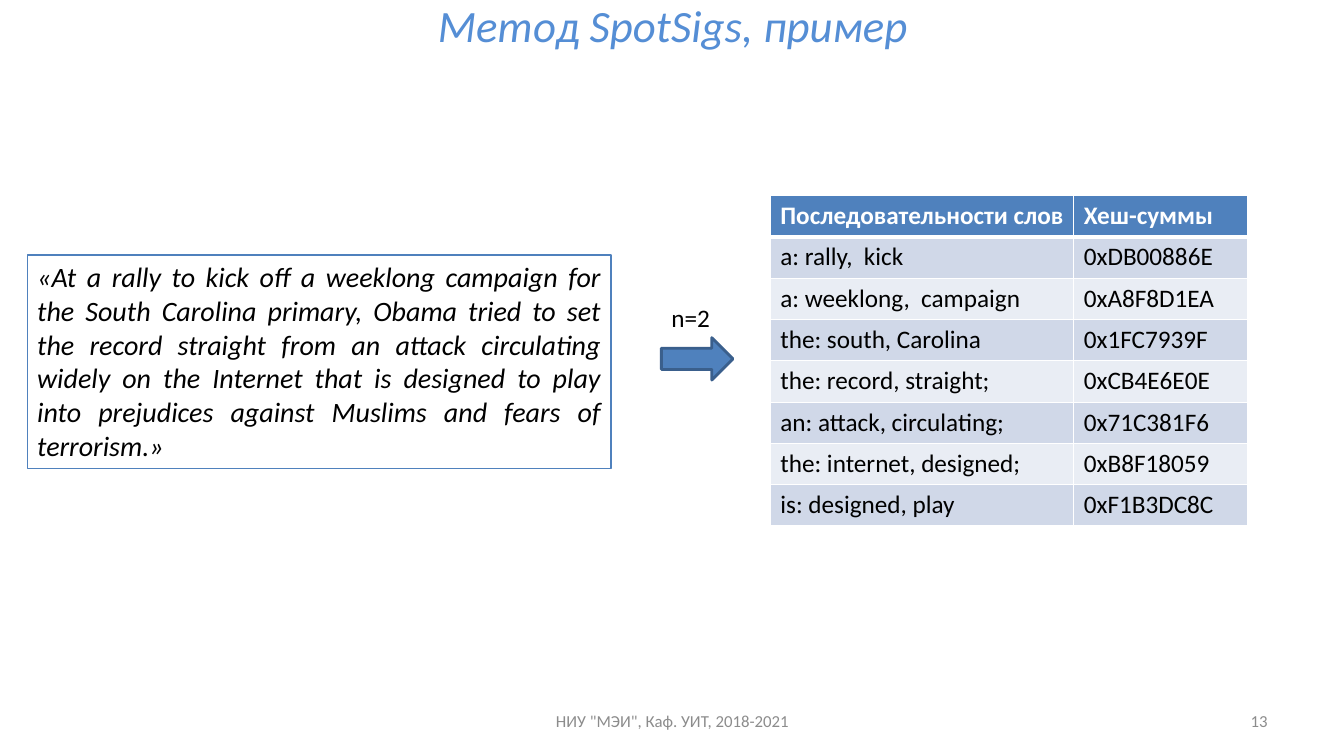
"""Builds the SpotSigs example slide: a quotation, an arrow and a table of hashes."""
from dataclasses import dataclass

from lxml import etree
from pptx import Presentation
from pptx import util as u
from pptx.dml.color import RGBColor
from pptx.enum import shapes, text
from pptx.oxml.ns import qn

TITLE = "Метод SpotSigs, пример"
QUOTE = (
    "«At a rally to kick off a weeklong campaign for the South Carolina primary, "
    "Obama tried to set the record straight from an attack circulating widely on "
    "the Internet that is designed to play into prejudices against Muslims and "
    "fears of terrorism.»"
)
STEP = "n=2"
FOOTER = 'НИУ "МЭИ", Каф. УИТ, 2018-2021'
PAGE = "13"
HASHES = [
    ("Последовательности слов", "Хеш-суммы"),
    ("a: rally,  kick", "0xDB00886E"),
    ("a: weeklong,  campaign", "0xA8F8D1EA"),
    ("the: south, Carolina", "0x1FC7939F"),
    ("the: record, straight;", "0xCB4E6E0E"),
    ("an: attack, circulating;", "0x71C381F6"),
    ("the: internet, designed;", "0xB8F18059"),
    ("is: designed, play", "0xF1B3DC8C"),
]
COL_WIDTHS = (3.01, 1.72)
ROW_HEIGHT = 0.41


@dataclass(frozen=True)
class Theme:
    font: str = "Calibri"
    title: str = "558ED5"
    accent: str = "4F81BD"
    edge: str = "3A5F8C"
    ink: str = "000000"
    paper: str = "FFFFFF"
    muted: str = "8C8C8C"
    bands: tuple = ("D0D8E8", "E9EDF4")
    title_size: int = 32
    quote_size: int = 20
    body_size: int = 18
    footer_size: int = 12


T = Theme()
ALIGN = text.PP_ALIGN
MIDDLE = text.MSO_ANCHOR.MIDDLE
TOP = text.MSO_ANCHOR.TOP


def rgb(value):
    return RGBColor.from_string(value)


def box(left, top, width, height):
    return [u.Inches(n) for n in (left, top, width, height)]


def write(tf, words, size, color, align=ALIGN.LEFT, bold=False, italic=False):
    p = tf.paragraphs[0]
    p.alignment = align
    r = p.add_run()
    r.text = words
    f = r.font
    f.name, f.size, f.bold, f.italic = T.font, u.Pt(size), bold, italic
    f.color.rgb = rgb(color)


def add_label(s, place, words, size, color, align=ALIGN.LEFT, anchor=MIDDLE,
              wrap=True, italic=False):
    tf = s.shapes.add_textbox(*box(*place)).text_frame
    tf.word_wrap = wrap
    tf.vertical_anchor = anchor
    write(tf, words, size, color, align, italic=italic)


def add_figure(s, kind, place, line, width, fill=None):
    sp = s.shapes.add_shape(kind, *box(*place))
    sp.shadow.inherit = False
    if fill:
        sp.fill.solid()
        sp.fill.fore_color.rgb = rgb(fill)
    else:
        sp.fill.background()
    sp.line.color.rgb = rgb(line)
    sp.line.width = u.Pt(width)
    return sp


def set_borders(cell, widths):
    tc_pr = cell._tc.get_or_add_tcPr()
    for i, (side, width) in enumerate(widths.items()):
        ln = etree.Element(qn(f"a:ln{side}"), w=str(u.Pt(width)))
        fill = etree.SubElement(ln, qn("a:solidFill"))
        etree.SubElement(fill, qn("a:srgbClr"), val=T.paper)
        tc_pr.insert(i, ln)


def add_hashes(s, left, top):
    place = box(left, top, sum(COL_WIDTHS), ROW_HEIGHT * len(HASHES))
    table = s.shapes.add_table(len(HASHES), len(COL_WIDTHS), *place).table
    for col, width in zip(table.columns, COL_WIDTHS):
        col.width = u.Inches(width)
    for i, row in enumerate(HASHES):
        head = i == 0
        table.rows[i].height = u.Inches(ROW_HEIGHT)
        for j, words in enumerate(row):
            cell = table.cell(i, j)
            cell.fill.solid()
            cell.fill.fore_color.rgb = rgb(T.accent if head else T.bands[(i - 1) % 2])
            set_borders(cell, {"L": 1, "R": 1, "T": 3 if i == 1 else 1, "B": 3 if head else 1})
            write(cell.text_frame, words, T.body_size, T.paper if head else T.ink, bold=head)


def main():
    prs = Presentation()
    prs.slide_width, prs.slide_height = u.Inches(13.33), u.Inches(7.5)
    s = prs.slides.add_slide(prs.slide_layouts[6])

    add_label(s, (0.27, 0.08, 12.81, 0.33), TITLE, T.title_size, T.title,
              ALIGN.CENTER, italic=True)
    add_label(s, (4.56, 6.95, 4.22, 0.4), FOOTER, T.footer_size, T.muted, ALIGN.CENTER)
    add_label(s, (9.56, 6.95, 3.11, 0.4), PAGE, T.footer_size, T.muted, ALIGN.RIGHT)
    add_hashes(s, 7.64, 1.94)

    kinds = shapes.MSO_SHAPE
    quote = add_figure(s, kinds.RECTANGLE, (0.27, 2.53, 5.79, 2.12), T.accent, 0.75)
    tf = quote.text_frame
    tf.word_wrap = True
    tf.vertical_anchor = TOP
    write(tf, QUOTE, T.quote_size, T.ink, ALIGN.JUSTIFY, italic=True)

    add_figure(s, kinds.RIGHT_ARROW, (6.56, 3.35, 0.71, 0.42), T.edge, 2, T.accent)
    add_label(s, (6.56, 2.95, 0.59, 0.4), STEP, T.body_size, T.ink, anchor=TOP, wrap=False)
    prs.save("out.pptx")


if __name__ == "__main__":
    main()
